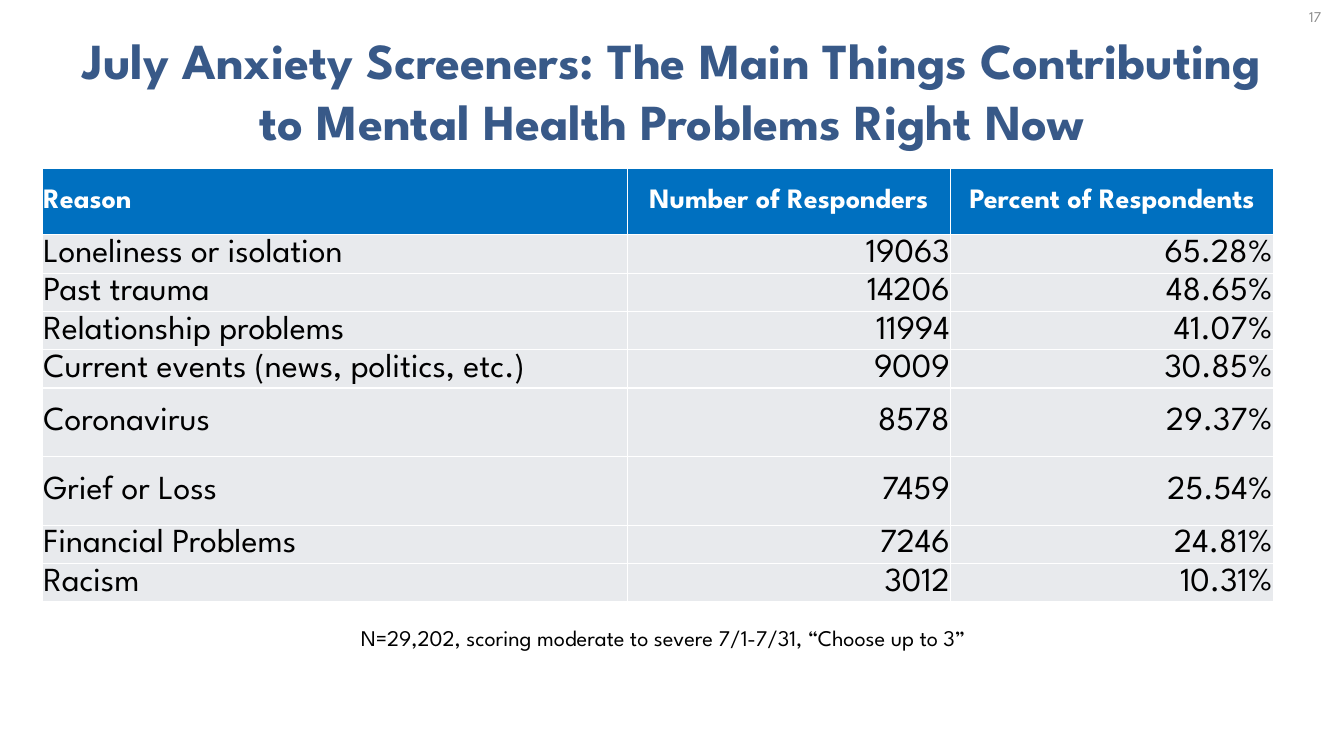
from pptx import Presentation
from pptx.dml.color import RGBColor
from pptx.enum.text import MSO_ANCHOR as Anchor, MSO_AUTO_SIZE as AutoSize, PP_ALIGN as Align
from pptx.oxml import parse_xml
from pptx.oxml.ns import nsdecls
from pptx.util import Inches, Pt

# Content
TITLE = "July Anxiety Screeners: The Main Things Contributing to Mental Health Problems Right Now"
HEADER = ("Reason", "Number of Responders", "Percent of Respondents")
REASONS = [
    ("Loneliness or isolation", "19063", "65.28%"),
    ("Past trauma", "14206", "48.65%"),
    ("Relationship problems", "11994", "41.07%"),
    ("Current events (news, politics, etc.)", "9009", "30.85%"),
    ("Coronavirus", "8578", "29.37%"),
    ("Grief or Loss", "7459", "25.54%"),
    ("Financial Problems", "7246", "24.81%"),
    ("Racism", "3012", "10.31%"),
]
SAMPLE_NOTE = "N=29,202, scoring moderate to severe 7/1-7/31, “Choose up to 3”"
PAGE_NUMBER = "17"

# Style
FONT = "League Spartan"
TITLE_BLUE, HEADER_BLUE, ROW_GREY = "385988", "0070C0", "E8EAED"
WHITE, BLACK, NUMBER_GREY = "FFFFFF", "000000", "8C8C8C"
COLUMN_WIDTHS = (5.8, 3.21, 3.2)
HEADER_HEIGHT, ROW_HEIGHT, TALL_HEIGHT = 0.66, 0.38, 0.68
TALL_REASONS = ("Coronavirus", "Grief or Loss")


def color(value):
    return RGBColor.from_string(value)


def write(frame, text, size, ink, align=Align.LEFT, bold=False):
    para = frame.paragraphs[0]
    para.text = text
    para.alignment = align
    font = para.font
    font.name, font.size, font.bold = FONT, Pt(size), bold
    font.color.rgb = color(ink)


def add_label(page, place, text, size, ink, align, anchor):
    frame = page.shapes.add_textbox(*map(Inches, place)).text_frame
    frame.word_wrap = True
    frame.vertical_anchor = anchor
    write(frame, text, size, ink, align)


def set_borders(cell, ink, width):
    properties = cell._tc.get_or_add_tcPr()
    for index, side in enumerate(("lnL", "lnR", "lnT", "lnB")):
        properties.insert(index, parse_xml(
            f'<a:{side} {nsdecls("a")} w="{Pt(width)}"><a:solidFill>'
            f'<a:srgbClr val="{ink}"/></a:solidFill></a:{side}>'))


def fill_cell(cell, text, size, ink, fill, align, bold):
    cell.margin_left = cell.margin_right = cell.margin_top = Inches(0.01)
    cell.margin_bottom = 0
    cell.vertical_anchor = Anchor.MIDDLE
    cell.fill.solid()
    cell.fill.fore_color.rgb = color(fill)
    set_borders(cell, WHITE, 1)
    write(cell.text_frame, text, size, ink, align, bold)


def main():
    deck = Presentation()
    deck.slide_width, deck.slide_height = Inches(13.33), Inches(7.5)
    page = deck.slides.add_slide(deck.slide_layouts[5])

    # Title
    title = page.shapes.title
    title.left, title.top, title.width, title.height = map(Inches, (0.56, 0.53, 12.21, 0.72))
    title.text_frame.auto_size = AutoSize.NONE
    title.text_frame.vertical_anchor = Anchor.MIDDLE
    write(title.text_frame, TITLE, 36, TITLE_BLUE, Align.CENTER, True)

    # Table of reasons
    heights = [HEADER_HEIGHT] + [
        TALL_HEIGHT if reason in TALL_REASONS else ROW_HEIGHT for reason, *_ in REASONS]
    place = (0.42, 1.67, sum(COLUMN_WIDTHS), sum(heights))
    table = page.shapes.add_table(
        len(heights), len(HEADER), *map(Inches, place)).table
    for column, width in zip(table.columns, COLUMN_WIDTHS):
        column.width = Inches(width)
    for row, height in zip(table.rows, heights):
        row.height = Inches(height)
    for r, values in enumerate([HEADER] + REASONS):
        for c, text in enumerate(values):
            if r == 0:
                look = (20, WHITE, HEADER_BLUE, Align.CENTER if c else Align.LEFT, True)
            else:
                look = (24, BLACK, ROW_GREY, Align.RIGHT if c else Align.LEFT, False)
            fill_cell(table.cell(r, c), text, *look)

    # Page number and sample note
    add_label(page, (12.76, 0, 0.57, 0.32), PAGE_NUMBER, 10.7, NUMBER_GREY,
              Align.CENTER, Anchor.MIDDLE)
    add_label(page, (3.48, 6.14, 7.3, 0.37), SAMPLE_NOTE, 16, BLACK,
              Align.LEFT, Anchor.TOP)

    deck.save("out.pptx")


if __name__ == "__main__":
    main()
